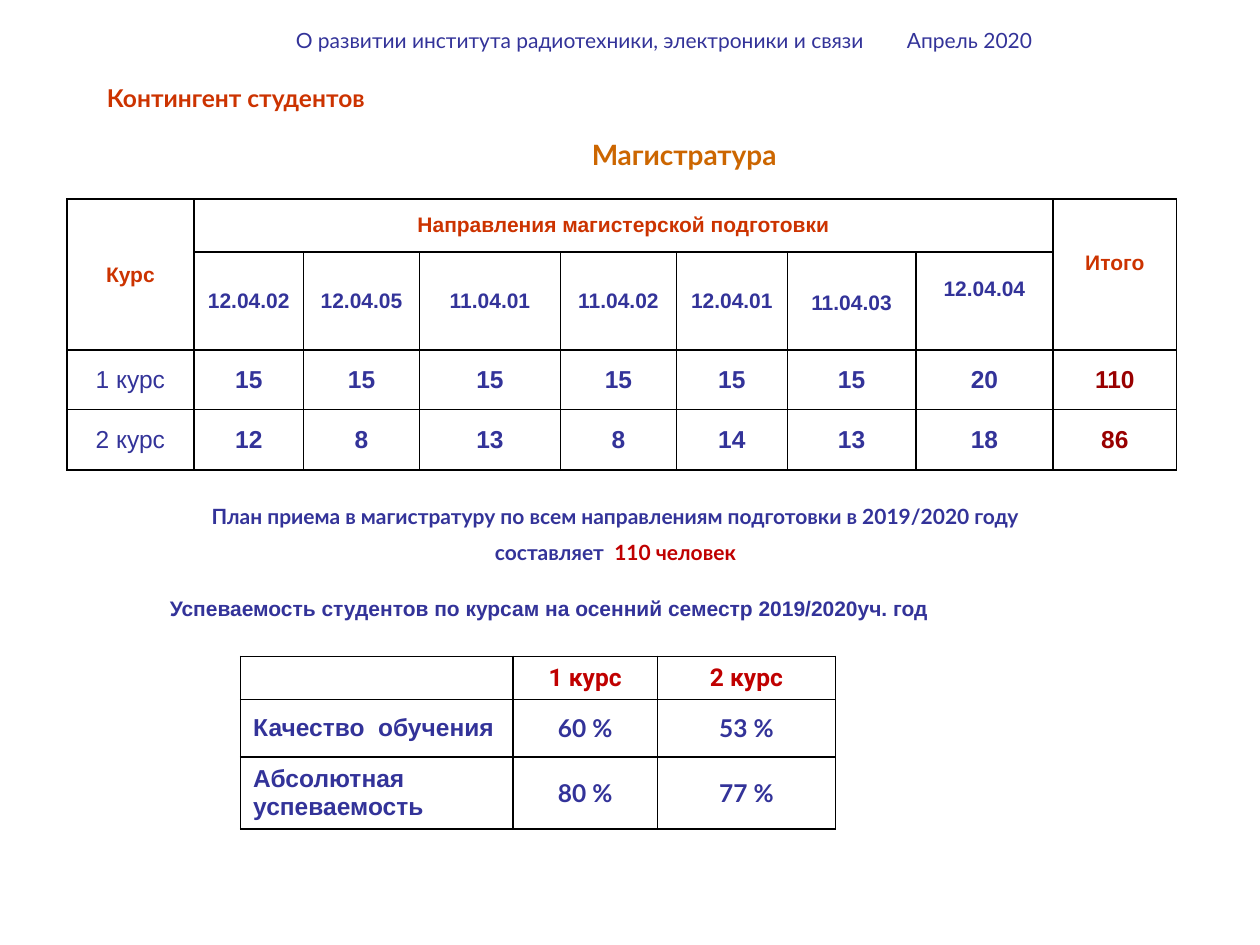
from dataclasses import dataclass

from lxml.etree import SubElement
from pptx import Presentation
from pptx.dml.color import RGBColor
from pptx.enum.text import MSO_ANCHOR, PP_ALIGN
from pptx.oxml.ns import qn
from pptx.util import Inches, Pt


@dataclass(frozen=True)
class Theme:
    heading: str = "CC3300"
    subtitle: str = "CC6600"
    body: str = "333399"
    total: str = "990000"
    accent: str = "C00000"
    border: str = "000000"
    sans: str = "Lato"
    table: str = "Arial"
    label: str = "Roboto"
    small: int = 12
    medium: int = 14
    large: int = 16


THEME = Theme()


def format_runs(paragraph, color, size, font=THEME.sans, bold=True):
    for run in paragraph.runs:
        run.font.name = font
        run.font.size = Pt(size)
        run.font.bold = bold
        run.font.color.rgb = RGBColor.from_string(color)


def add_text(slide, box, text, color, size, font=THEME.sans, bold=True,
             align=PP_ALIGN.LEFT, inset=0.05):
    shape = slide.shapes.add_textbox(*map(Inches, box))
    frame = shape.text_frame
    frame.word_wrap = True
    frame.margin_top = frame.margin_bottom = Inches(inset)
    frame.text = text
    for paragraph in frame.paragraphs:
        paragraph.alignment = align
        format_runs(paragraph, color, size, font, bold)
    return frame


def add_tab_stop(paragraph, position):
    tabs = SubElement(paragraph._p.get_or_add_pPr(), qn("a:tabLst"))
    SubElement(tabs, qn("a:tab"), pos=str(Inches(position)), algn="l")


def style_cell(cell):
    properties = cell._tc.get_or_add_tcPr()
    for side in ("L", "R", "T", "B"):
        line = SubElement(properties, qn(f"a:ln{side}"), w=str(Pt(1)))
        fill = SubElement(line, qn("a:solidFill"))
        SubElement(fill, qn("a:srgbClr"), val=THEME.border)
    cell.fill.background()
    cell.vertical_anchor = MSO_ANCHOR.MIDDLE


def add_grid(slide, left, top, widths, heights):
    frame = slide.shapes.add_table(
        len(heights), len(widths), Inches(left), Inches(top),
        Inches(sum(widths)), Inches(sum(heights)))
    table = frame.table
    table.first_row = table.horz_banding = False
    for column, width in zip(table.columns, widths):
        column.width = Inches(width)
    for row, height in zip(table.rows, heights):
        row.height = Inches(height)
    for cell in table.iter_cells():
        style_cell(cell)
    return table


def set_cell(cell, text, color, size, font=THEME.table, bold=True,
             align=PP_ALIGN.CENTER):
    cell.text_frame.text = text
    paragraph = cell.text_frame.paragraphs[0]
    paragraph.alignment = align
    format_runs(paragraph, color, size, font, bold)


def add_enrolment_table(slide):
    programmes = ["12.04.02", "12.04.05", "11.04.01", "11.04.02",
                  "12.04.01", "11.04.03", "12.04.04"]
    enrolment = {
        "1 курс": [15, 15, 15, 15, 15, 15, 20, 110],
        "2 курс": [12, 8, 13, 8, 14, 13, 18, 86],
    }
    widths = [1.01, 0.87, 0.92, 1.12, 0.92, 0.88, 1.02, 1.09, 0.98]
    table = add_grid(slide, 0.53, 1.58, widths, [0.42, 0.78, 0.47, 0.48])
    total = len(widths) - 1
    headings = [
        ("Курс", 0, 1, 0),
        ("Направления магистерской подготовки", 1, 0, total - 1),
        ("Итого", total, 1, total),
    ]
    for text, first, last_row, last in headings:
        table.cell(0, first).merge(table.cell(last_row, last))
        set_cell(table.cell(0, first), text, THEME.heading, THEME.small)
    for column, code in enumerate(programmes, 1):
        set_cell(table.cell(1, column), code, THEME.body, THEME.small)
    table.cell(1, 6).margin_top = Inches(0.08)
    for cell in (table.cell(1, 7), table.cell(0, total)):
        cell.margin_bottom = Inches(0.24)
    for row, (course, counts) in enumerate(enrolment.items(), 2):
        set_cell(table.cell(row, 0), course, THEME.body, THEME.medium,
                 bold=False)
        for column, count in enumerate(counts, 1):
            color = THEME.total if column == total else THEME.body
            set_cell(table.cell(row, column), str(count), color, THEME.medium)


def add_performance_table(slide):
    performance = {
        "Качество  обучения": ["60 %", "53 %"],
        "Абсолютная успеваемость": ["80 %", "77 %"],
    }
    table = add_grid(slide, 1.91, 5.21, [2.16, 1.15, 1.41], [0.34, 0.46, 0.57])
    corner = table.cell(0, 0)
    corner.margin_top = corner.margin_bottom = 0
    for column, course in enumerate(["1 курс", "2 курс"], 1):
        cell = table.cell(0, column)
        set_cell(cell, course, THEME.accent, THEME.medium, THEME.label)
        cell.vertical_anchor = MSO_ANCHOR.BOTTOM
    for row, (measure, shares) in enumerate(performance.items(), 1):
        set_cell(table.cell(row, 0), measure, THEME.body, THEME.medium,
                 align=PP_ALIGN.LEFT)
        for column, share in enumerate(shares, 1):
            set_cell(table.cell(row, column), share, THEME.body, THEME.medium,
                     THEME.sans)


def add_admission_plan(slide):
    frame = add_text(
        slide, (0.29, 3.95, 9.19, 0.59),
        "План приема в магистратуру по всем направлениям подготовки "
        "в 2019/2020 году\nсоставляет ",
        THEME.body, THEME.small, align=PP_ALIGN.CENTER)
    for paragraph in frame.paragraphs:
        paragraph.space_after = Pt(6)
    closing = frame.paragraphs[-1]
    closing.add_run().text = " 110 человек"
    format_runs(closing, THEME.body, THEME.small)
    closing.runs[-1].font.color.rgb = RGBColor.from_string(THEME.accent)


def main():
    presentation = Presentation()
    presentation.slide_width = Inches(10)
    presentation.slide_height = Inches(7.5)
    slide = presentation.slides.add_slide(presentation.slide_layouts[6])

    add_text(slide, (0.75, 0.66, 8.5, 0.24), "Контингент студентов",
             THEME.heading, THEME.medium, inset=0)
    subtitle = add_text(slide, (0.41, 0.77, 9.06, 0.64), "Магистратура",
                        THEME.subtitle, THEME.large, align=PP_ALIGN.CENTER)
    subtitle.margin_left = Inches(1.08)
    subtitle.vertical_anchor = MSO_ANCHOR.BOTTOM
    add_enrolment_table(slide)
    header = add_text(
        slide, (2.25, 0.22, 6.57, 0.2),
        "О развитии института радиотехники, электроники и связи\tАпрель 2020",
        THEME.body, THEME.small, bold=False, inset=0)
    add_tab_stop(header.paragraphs[0], 4.85)
    add_admission_plan(slide)
    add_text(slide, (1.25, 4.68, 8.03, 0.3),
             "Успеваемость студентов по курсам на осенний семестр "
             "2019/2020уч. год", THEME.body, THEME.small, THEME.table)
    add_performance_table(slide)
    presentation.save("out.pptx")


if __name__ == "__main__":
    main()
